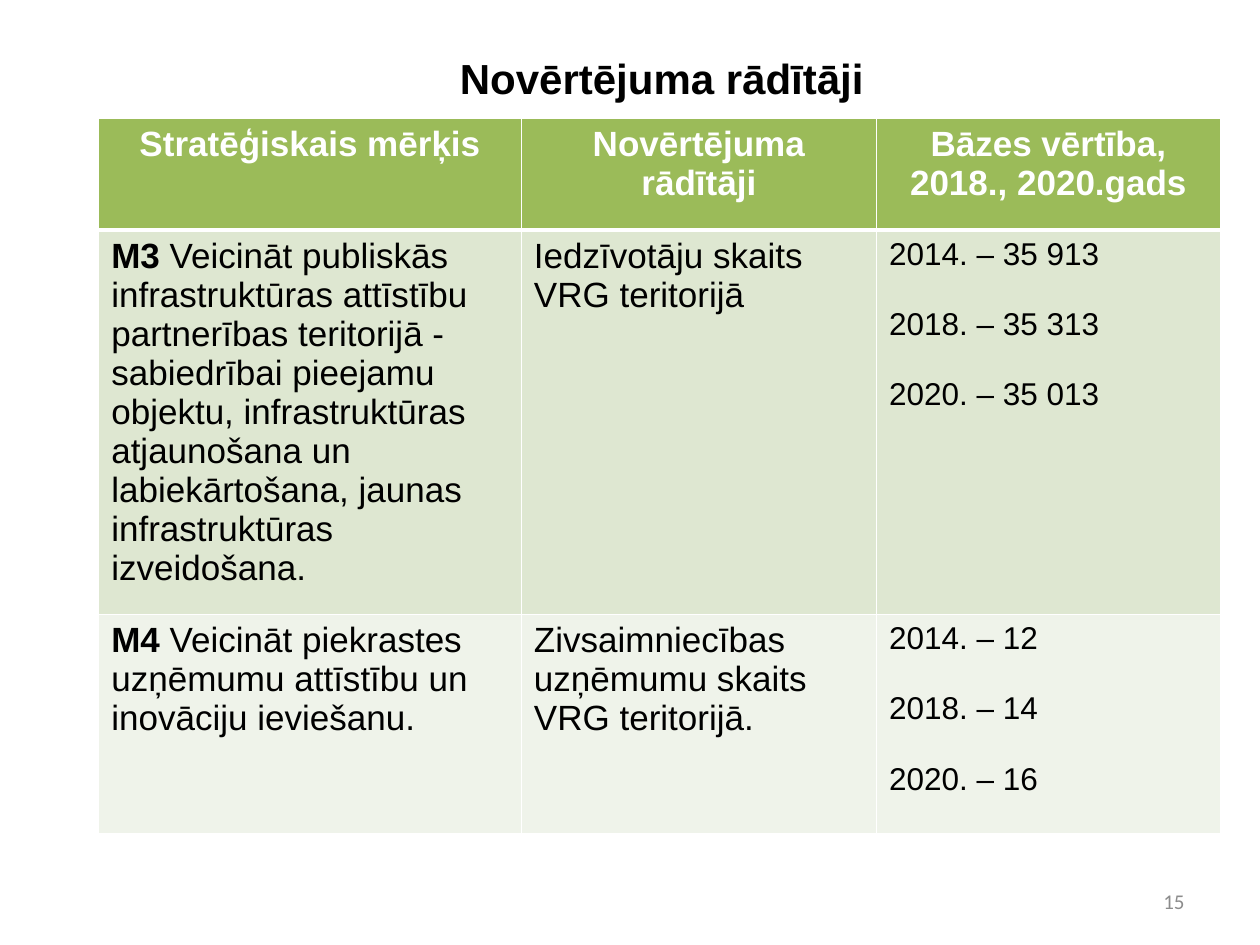
from lxml.etree import SubElement
from pptx import Presentation
from pptx.dml.color import RGBColor
from pptx.enum.text import MSO_ANCHOR as Anchor, PP_ALIGN as Align
from pptx.oxml.ns import qn
from pptx.util import Cm, Pt

HEADERS = [["Stratēģiskais mērķis"], ["Novērtējuma rādītāji"],
           ["Bāzes vērtība,", "2018., 2020.gads"]]
GOALS = [
    ("M3", " Veicināt publiskās infrastruktūras attīstību partnerības teritorijā - "
     "sabiedrībai pieejamu objektu, infrastruktūras atjaunošana un labiekārtošana, "
     "jaunas infrastruktūras izveidošana.",
     "Iedzīvotāju skaits VRG teritorijā",
     ["2014. – 35 913", "2018. – 35 313", "2020. – 35 013"], "DEE7D1"),
    ("M4", " Veicināt piekrastes uzņēmumu attīstību un inovāciju ieviešanu.",
     "Zivsaimniecības uzņēmumu skaits VRG teritorijā.",
     ["2014. – 12", "2018. – 14", "2020. – 16"], "EFF3EA"),
]
COLUMN_WIDTHS = [8.52, 7.16, 6.93]
ROW_HEIGHTS = [2.25, 7.75, 4.42]


def color(value):
    """Turn a hex string into a colour."""
    return RGBColor.from_string(value)


def write(paragraph, text, size=20, font="Arial", fill="000000", bold=False,
          align=Align.LEFT, gap=0):
    """Append a formatted run to a paragraph."""
    paragraph.alignment = align
    paragraph.space_after = Pt(gap)
    run = paragraph.add_run()
    run.text = text
    run.font.size = Pt(size)
    run.font.name = font
    run.font.bold = bold
    run.font.color.rgb = color(fill)


def write_lines(frame, lines, gap=0, **style):
    """Write one paragraph per line with a gap between them."""
    for index, line in enumerate(lines):
        paragraph = frame.add_paragraph() if index else frame.paragraphs[0]
        last = index == len(lines) - 1
        write(paragraph, line, gap=0 if last else gap, **style)


def style_cell(cell, fill, bottom=1, top=1):
    """Give a cell white borders and a solid fill."""
    properties = cell._tc.get_or_add_tcPr()
    for side, width in (("L", 1), ("R", 1), ("T", top), ("B", bottom)):
        line = SubElement(properties, qn(f"a:ln{side}"), w=str(Pt(width)))
        solid = SubElement(line, qn("a:solidFill"))
        SubElement(solid, qn("a:srgbClr"), val="FFFFFF")
    cell.fill.solid()
    cell.fill.fore_color.rgb = color(fill)


def place(shape, left, top, width, height):
    """Move and size a shape."""
    shape.left, shape.top = Cm(left), Cm(top)
    shape.width, shape.height = Cm(width), Cm(height)


def add_title(slide, text, box):
    """Fill and place the title placeholder."""
    title = slide.shapes.title
    place(title, *box)
    title.text_frame.vertical_anchor = Anchor.MIDDLE
    write(title.text_frame.paragraphs[0], text, size=24, bold=True, align=Align.CENTER)


def add_indicator_table(slide, left, top):
    """Draw the table of goals, indicators and base values."""
    frame = slide.shapes.add_table(len(ROW_HEIGHTS), len(COLUMN_WIDTHS), Cm(left), Cm(top),
                                   Cm(sum(COLUMN_WIDTHS)), Cm(sum(ROW_HEIGHTS)))
    table = frame.table
    for column, width in zip(table.columns, COLUMN_WIDTHS):
        column.width = Cm(width)
    for row, height in zip(table.rows, ROW_HEIGHTS):
        row.height = Cm(height)
    for cell, lines in zip(table.rows[0].cells, HEADERS):
        style_cell(cell, "9BBB59", bottom=3)
        write_lines(cell.text_frame, lines, fill="FFFFFF", bold=True, align=Align.CENTER)
    for index, (code, goal, indicator, values, fill) in enumerate(GOALS, 1):
        cells = list(table.rows[index].cells)
        for cell in cells:
            style_cell(cell, fill, top=3 if index == 1 else 1)
        goal_paragraph = cells[0].text_frame.paragraphs[0]
        write(goal_paragraph, code, bold=True)
        write(goal_paragraph, goal)
        write(cells[1].text_frame.paragraphs[0], indicator)
        write_lines(cells[2].text_frame, values, size=18, gap=20)


def add_page_number(slide, text, box):
    """Write the page number at the lower right."""
    frame = slide.shapes.add_textbox(*map(Cm, box)).text_frame
    frame.word_wrap = True
    frame.vertical_anchor = Anchor.MIDDLE
    write(frame.paragraphs[0], text, size=12, font="Calibri", fill="8C8C8C",
          align=Align.RIGHT)


def main():
    """Build and save the presentation."""
    presentation = Presentation()
    presentation.slide_width, presentation.slide_height = Cm(25.4), Cm(19.05)
    slide = presentation.slides.add_slide(presentation.slide_layouts.get_by_name("Title Only"))
    add_title(slide, "Novērtējuma rādītāji", (2.54, 0.76, 21.6, 1.63))
    add_indicator_table(slide, 1.99, 2.39)
    add_page_number(slide, "15", (18.2, 17.66, 5.93, 1.01))
    presentation.save("out.pptx")


if __name__ == "__main__":
    main()
